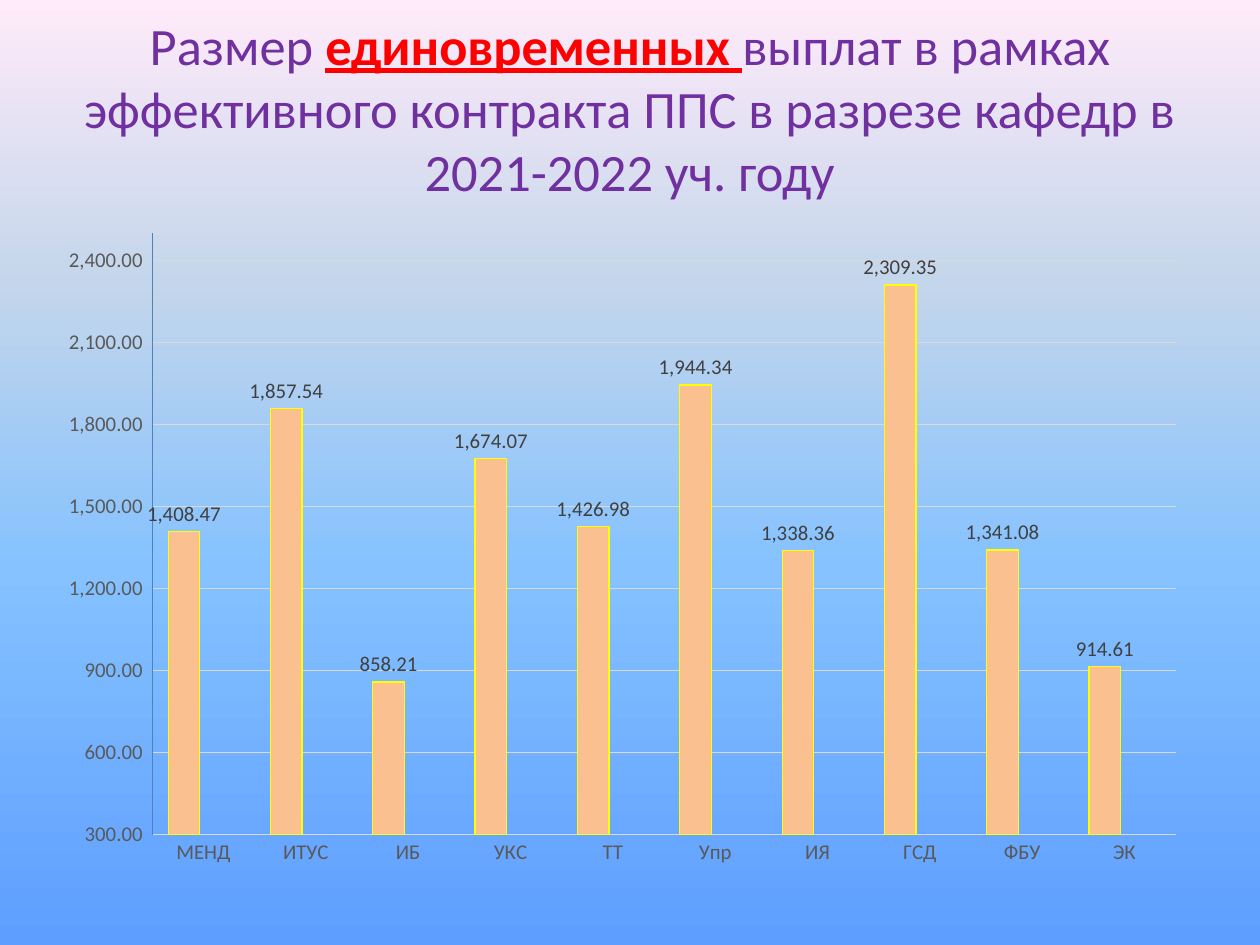
import copy

import pptx
import pptx.chart.data
import pptx.dml.color
import pptx.enum.chart
import pptx.enum.dml
import pptx.enum.text
import pptx.oxml
import pptx.oxml.ns
import pptx.util

RGBColor = pptx.dml.color.RGBColor
PURPLE = RGBColor(0x70, 0x30, 0xA0)
RED = RGBColor(0xFF, 0x00, 0x00)
PEACH = RGBColor(0xFA, 0xC0, 0x90)
YELLOW = RGBColor(0xFF, 0xFF, 0x00)
AXIS_BLUE = RGBColor(0x4F, 0x81, 0xBD)
PALE_GRAY = RGBColor(0xD9, 0xD9, 0xD9)
AXIS_GRAY = RGBColor(0x59, 0x59, 0x59)
LABEL_GRAY = RGBColor(0x40, 0x40, 0x40)
BRICK = RGBColor(0xCB, 0x3E, 0x3A)
SKY = [
    (0, RGBColor(0x5E, 0x9E, 0xFF)),
    (0.4, RGBColor(0x85, 0xC2, 0xFF)),
    (0.7, RGBColor(0xC4, 0xD6, 0xEB)),
    (1, RGBColor(0xFF, 0xEB, 0xFA)),
]
MONEY = '_(* #,##0.00_);_(* \\(#,##0.00\\);_(* "-"??_);_(@_)'
PAYMENTS = {
    "МЕНД": 1408.47, "ИТУС": 1857.54, "ИБ": 858.21, "УКС": 1674.07, "ТТ": 1426.98,
    "Упр": 1944.34, "ИЯ": 1338.36, "ГСД": 2309.35, "ФБУ": 1341.08, "ЭК": 914.61,
}


class SlideBuilder:
    """Holds the deck, its current page and the shared text style."""

    font_name = "Calibri"

    def __init__(self, width, height):
        self.deck = pptx.Presentation()
        self.deck.slide_width = pptx.util.Inches(width)
        self.deck.slide_height = pptx.util.Inches(height)
        self.page = self.deck.slides.add_slide(self.deck.slide_layouts[6])

    def place(self, left, top, width, height):
        across, down = self.deck.slide_width, self.deck.slide_height
        return [round(share * size) for share, size in
                zip((left, top, width, height), (across, down, across, down))]

    def style_font(self, font, size, color):
        font.name = self.font_name
        font.size = pptx.util.Pt(size)
        font.color.rgb = color

    def style_line(self, line, color, width=0.75):
        line.color.rgb = color
        line.width = pptx.util.Pt(width)

    def background(self, stops):
        fill = self.page.background.fill
        fill.gradient()
        fill.gradient_angle = 90
        stop_list = fill.gradient_stops[0]._gs.getparent()
        for _ in range(len(stops) - len(fill.gradient_stops)):
            stop_list.append(copy.deepcopy(stop_list[-1]))
        for stop, (position, color) in zip(fill.gradient_stops, stops):
            stop.position = position
            stop.color.rgb = color

    def title(self, area, size, spans):
        box = self.page.shapes.add_textbox(*self.place(*area))
        frame = box.text_frame
        frame.word_wrap = True
        frame.vertical_anchor = pptx.enum.text.MSO_ANCHOR.MIDDLE
        para = frame.paragraphs[0]
        para.alignment = pptx.enum.text.PP_ALIGN.CENTER
        self.style_font(para.font, size, PURPLE)
        for text, color, strong in spans:
            span = para.add_run()
            span.text = text
            self.style_font(span.font, size, color)
            span.font.bold = span.font.underline = strong

    def column_chart(self, area, values, plot):
        data = pptx.chart.data.CategoryChartData(number_format=MONEY)
        data.categories = list(values)
        data.add_series("Series 1", list(values.values()))
        data.add_series("Series 2", [0])
        kind = pptx.enum.chart.XL_CHART_TYPE.COLUMN_CLUSTERED
        chart = self.page.shapes.add_chart(kind, *self.place(*area), data).chart
        chart.has_legend = chart.has_title = False
        self.style_font(chart.font, 10, RGBColor(0, 0, 0))
        columns = chart.plots[0]
        columns.vary_by_categories = False
        columns.gap_width, columns.overlap = 100, -24
        payments, empty = columns.series
        for series, color in ((payments, PEACH), (empty, BRICK)):
            series.format.fill.solid()
            series.format.fill.fore_color.rgb = color
        self.style_line(payments.format.line, YELLOW)
        self.value_labels(payments.data_labels)
        self.axis(chart.category_axis, PALE_GRAY, 1)
        self.axis(chart.value_axis, AXIS_BLUE, 0.75)
        self.value_scale(chart.value_axis, 300, 2500, 300)
        self.plot_layout(chart, plot)

    def value_labels(self, labels):
        labels.show_value = True
        labels.position = pptx.enum.chart.XL_LABEL_POSITION.OUTSIDE_END
        labels.number_format = MONEY
        labels.number_format_is_linked = False
        self.style_font(labels.font, 12, LABEL_GRAY)

    def axis(self, axis, color, width):
        axis.major_tick_mark = axis.minor_tick_mark = pptx.enum.chart.XL_TICK_MARK.NONE
        self.style_font(axis.tick_labels.font, 12, AXIS_GRAY)
        self.style_line(axis.format.line, color, width)

    def value_scale(self, axis, low, high, step):
        axis.minimum_scale, axis.maximum_scale, axis.major_unit = low, high, step
        axis.tick_labels.number_format = MONEY
        axis.tick_labels.number_format_is_linked = False
        self.style_line(axis.major_gridlines.format.line, PALE_GRAY)

    def plot_layout(self, chart, shares):
        area = chart._chartSpace.chart.plotArea
        for old in area.findall(pptx.oxml.ns.qn("c:layout")):
            area.remove(old)
        settings = [("layoutTarget", "inner"), ("xMode", "edge"), ("yMode", "edge")]
        settings += zip("xywh", shares)
        inner = "".join(f'<c:{name} val="{value}"/>' for name, value in settings)
        area.insert(0, pptx.oxml.parse_xml(
            f'<c:layout {pptx.oxml.ns.nsdecls("c")}>'
            f"<c:manualLayout>{inner}</c:manualLayout></c:layout>"))


def main():
    builder = SlideBuilder(10, 7.5)
    builder.background(SKY)
    builder.title((0.012, 0.03, 0.976, 0.167), 30, [
        ("Размер ", PURPLE, False),
        ("единовременных ", RED, True),
        ("выплат в рамках эффективного контракта ППС в разрезе кафедр в 2021-2022 уч. году",
         PURPLE, False),
    ])
    builder.column_chart((0.051, 0.216, 0.9, 0.767), PAYMENTS, (0.07, 0.04, 0.91, 0.83))
    builder.deck.save("out.pptx")


if __name__ == "__main__":
    main()
